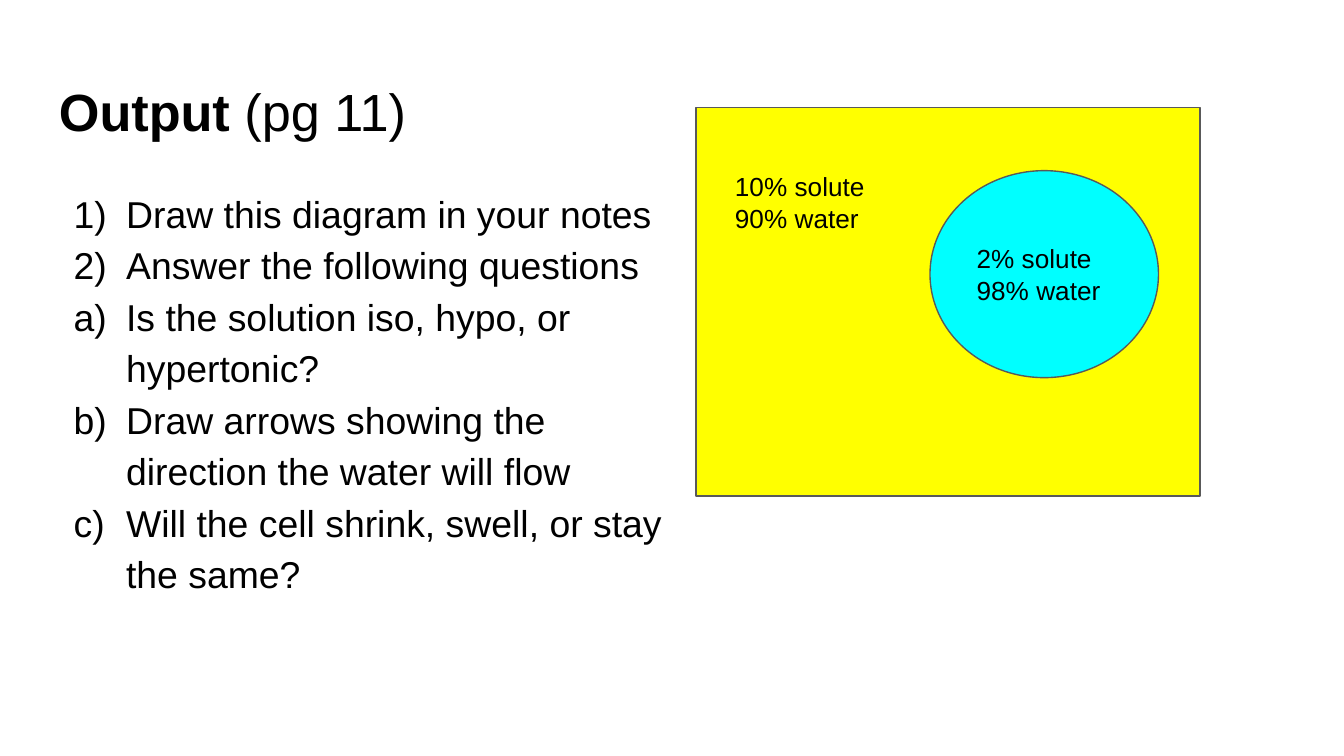
from dataclasses import dataclass

from lxml import etree
from pptx import Presentation
from pptx import util as u
from pptx.dml.color import RGBColor
from pptx.enum import shapes, text
from pptx.oxml import ns


@dataclass(frozen=True)
class Theme:
    font: str = "Arial"
    ink: str = "000000"
    outline: str = "595959"
    solution: str = "FFFF00"
    cell: str = "00FFFF"
    title_size: int = 28
    body_size: int = 20
    label_size: int = 14


@dataclass(frozen=True)
class Area:
    left: float
    top: float
    width: float
    height: float

    def lengths(self) -> tuple:
        return tuple(u.Inches(v) for v in (self.left, self.top, self.width, self.height))


@dataclass(frozen=True)
class Step:
    words: str
    numbering: str


THEME = Theme()
PAGE_WIDTH = 10
PAGE_HEIGHT = PAGE_WIDTH * 9 / 16
NUMBER, LETTER = "arabicParenR", "alphaLcParenR"
STEPS = [
    Step("Draw this diagram in your notes", NUMBER),
    Step("Answer the following questions", NUMBER),
    Step("Is the solution iso, hypo, or hypertonic?", LETTER),
    Step("Draw arrows showing the direction the water will flow", LETTER),
    Step("Will the cell shrink, swell, or stay the same?", LETTER),
]


def add_span(para, words: str, *, size: int, bold: bool = False) -> None:
    span = para.add_run()
    span.text = words
    span.font.name = THEME.font
    span.font.size = u.Pt(size)
    span.font.bold = bold
    span.font.color.rgb = RGBColor.from_string(THEME.ink)


def write_lines(shape, lines: list[str], *, size: int, anchor=text.MSO_ANCHOR.TOP) -> list:
    """Write one left-aligned paragraph per line and return the paragraphs."""
    frame = shape.text_frame
    frame.word_wrap = True
    frame.vertical_anchor = anchor
    frame.margin_left = frame.margin_right = u.Inches(0.1)
    frame.margin_top = frame.margin_bottom = u.Inches(0.1)
    paras = [frame.paragraphs[0]] + [frame.add_paragraph() for _ in lines[1:]]
    for para, line in zip(paras, lines):
        para.alignment = text.PP_ALIGN.LEFT
        add_span(para, line, size=size)
    return paras


def add_text(page, area: Area, lines: list[str], *, size: int) -> list:
    return write_lines(page.shapes.add_textbox(*area.lengths()), lines, size=size)


def number_paragraph(para, numbering: str) -> None:
    para.line_spacing = 1.15
    properties = para._p.get_or_add_pPr()
    properties.set("marL", str(u.Inches(0.5)))
    properties.set("indent", str(u.Inches(-0.39)))
    etree.SubElement(properties, ns.qn("a:buFont"), typeface=THEME.font)
    etree.SubElement(properties, ns.qn("a:buAutoNum"), type=numbering)


def add_region(page, kind, area: Area, fill: str):
    region = page.shapes.add_shape(kind, *area.lengths())
    region.shadow.inherit = False
    region.fill.solid()
    region.fill.fore_color.rgb = RGBColor.from_string(fill)
    region.line.color.rgb = RGBColor.from_string(THEME.outline)
    region.line.width = u.Pt(0.75)
    return region


def main() -> None:
    deck = Presentation()
    deck.slide_width, deck.slide_height = u.Inches(PAGE_WIDTH), u.Inches(PAGE_HEIGHT)
    page = deck.slides.add_slide(deck.slide_layouts[6])

    title = add_text(page, Area(0.34, 0.49, 9.32, 0.63), ["Output"], size=THEME.title_size)[0]
    title.runs[0].font.bold = True
    add_span(title, " (pg 11)", size=THEME.title_size)

    paras = add_text(page, Area(0.34, 1.27, 4.94, 3.86),
                     [step.words for step in STEPS], size=THEME.body_size)
    for para, step in zip(paras, STEPS):
        number_paragraph(para, step.numbering)

    kinds = shapes.MSO_SHAPE
    add_region(page, kinds.RECTANGLE, Area(5.18, 0.8, 3.75, 2.89), THEME.solution)
    cell = add_region(page, kinds.OVAL, Area(6.92, 1.27, 1.7, 1.54), THEME.cell)
    write_lines(cell, ["2% solute", "98% water"], size=THEME.label_size,
                anchor=text.MSO_ANCHOR.MIDDLE)
    add_text(page, Area(5.37, 1.17, 1.18, 0.77), ["10% solute", "90% water"],
             size=THEME.label_size)

    deck.save("out.pptx")


if __name__ == "__main__":
    main()
